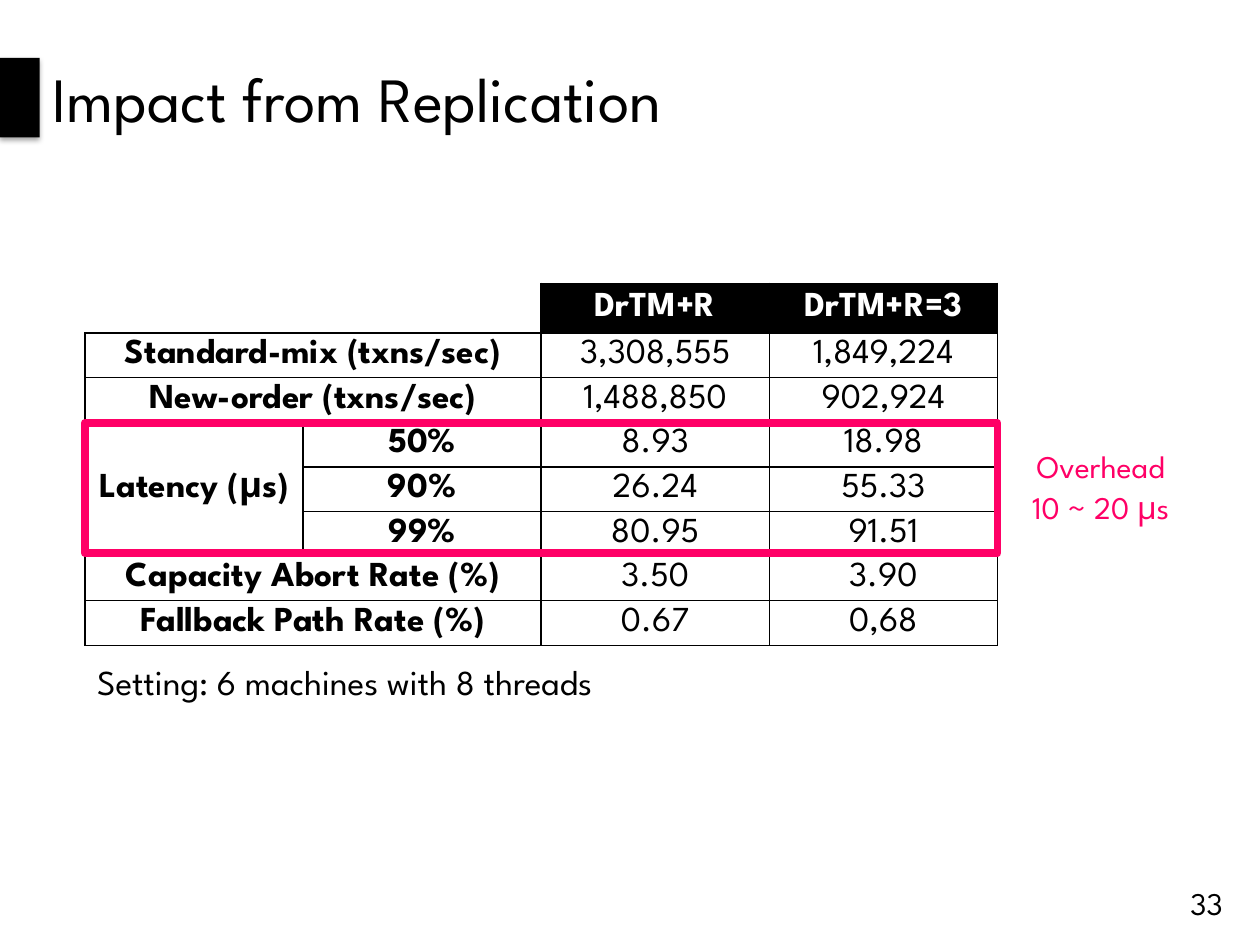
from dataclasses import dataclass

from lxml.etree import SubElement
from pptx import Presentation
from pptx.dml.color import RGBColor as Rgb
from pptx.enum.shapes import MSO_SHAPE as Shape
from pptx.enum.text import MSO_ANCHOR as Anchor, MSO_AUTO_SIZE as Fit, PP_ALIGN as Align
from pptx.oxml import parse_xml
from pptx.oxml.ns import nsdecls, qn
from pptx.util import Cm, Pt


@dataclass(frozen=True)
class Theme:
    font: str = "League Spartan"
    ink: str = "000000"
    paper: str = "FFFFFF"
    accent: str = "FF0066"
    title_size: int = 36
    body_size: int = 20
    note_size: int = 18
    grid_width: float = 1
    frame_width: float = 4.5


def apply_format(target, values):
    for name, value in values.items():
        setattr(target, name, value)


class SlideBuilder:
    def __init__(self, slide, theme):
        self.slide = slide
        self.theme = theme

    def set_text(self, frame, text, size, color=None, bold=False, align=Align.LEFT, spacing=1.0):
        """Fill a text frame, one paragraph per line of text."""
        for index, line in enumerate(text.split("\n")):
            para = frame.add_paragraph() if index else frame.paragraphs[0]
            apply_format(para, {"alignment": align, "line_spacing": spacing})
            span = para.add_run()
            span.text = line
            apply_format(span.font, {"name": self.theme.font, "size": Pt(size), "bold": bold})
            span.font.color.rgb = Rgb.from_string(color or self.theme.ink)

    def title(self, text, left, top, width, height):
        box = self.slide.shapes.title
        apply_format(box, {"left": Cm(left), "top": Cm(top),
                           "width": Cm(width), "height": Cm(height)})
        apply_format(box.text_frame, {"vertical_anchor": Anchor.MIDDLE, "auto_size": Fit.NONE})
        self.set_text(box.text_frame, text, self.theme.title_size)

    def text(self, text, left, top, width, height, size, anchor=Anchor.MIDDLE, **style):
        box = self.slide.shapes.add_textbox(Cm(left), Cm(top), Cm(width), Cm(height))
        apply_format(box.text_frame, {"word_wrap": True, "vertical_anchor": anchor})
        self.set_text(box.text_frame, text, size, **style)

    def rectangle(self, left, top, width, height):
        box = self.slide.shapes.add_shape(
            Shape.RECTANGLE, Cm(left), Cm(top), Cm(width), Cm(height))
        box.shadow.inherit = False
        return box

    def bar(self, *place):
        """Draw a solid block with a soft shadow below it."""
        box = self.rectangle(*place)
        box.fill.solid()
        box.fill.fore_color.rgb = Rgb.from_string(self.theme.ink)
        box.line.fill.background()
        effects = box.element.spPr.find(qn("a:effectLst"))
        effects.append(parse_xml(
            f'<a:outerShdw {nsdecls("a")} blurRad="{Pt(3.1)}" dist="{Pt(1.8)}" dir="5400000" '
            f'rotWithShape="0"><a:srgbClr val="{self.theme.ink}"><a:alpha val="35000"/>'
            '</a:srgbClr></a:outerShdw>'))

    def frame(self, *place):
        box = self.rectangle(*place)
        box.fill.background()
        box.line.color.rgb = Rgb.from_string(self.theme.accent)
        box.line.width = Pt(self.theme.frame_width)

    def borders(self, cell, sides):
        """Rule the named sides of a cell and clear the others."""
        properties = cell._tc.get_or_add_tcPr()
        for index, side in enumerate("LRTB"):
            line = parse_xml(f'<a:ln{side} {nsdecls("a")} w="{Pt(self.theme.grid_width)}"/>')
            if side in sides:
                fill = SubElement(line, qn("a:solidFill"))
                SubElement(fill, qn("a:srgbClr"), val=self.theme.ink)
            else:
                SubElement(line, qn("a:noFill"))
            properties.insert(index, line)

    def cell(self, cell, text, bold, header, corner):
        apply_format(cell, {"margin_left": Cm(0.2), "margin_right": Cm(0.2), "margin_top": 0,
                            "margin_bottom": 0, "vertical_anchor": Anchor.MIDDLE})
        if corner:
            cell.fill.background()
            cell.text_frame.paragraphs[0].font.size = Pt(self.theme.body_size)
        else:
            cell.fill.solid()
            back = self.theme.ink if header else self.theme.paper
            cell.fill.fore_color.rgb = Rgb.from_string(back)
        if text:
            self.set_text(cell.text_frame, text, self.theme.body_size, bold=bold,
                          color=self.theme.paper if header else None, align=Align.CENTER)
        self.borders(cell, "RB" if corner else "LRTB")

    def table(self, rows, left, top, widths, heights, merges, label_columns):
        """Build a grid whose header has an open corner above the label columns."""
        table = self.slide.shapes.add_table(
            len(rows), len(widths), Cm(left), Cm(top),
            Cm(sum(widths)), Cm(sum(heights))).table
        apply_format(table, {"first_row": False, "horz_banding": False})
        for column, width in zip(table.columns, widths):
            column.width = Cm(width)
        for row, height in zip(table.rows, heights):
            row.height = Cm(height)
        for first, last in merges:
            table.cell(*first).merge(table.cell(*last))
        for y, row in enumerate(rows):
            for x, text in enumerate(row):
                header, label = y == 0, x < label_columns
                self.cell(table.cell(y, x), text, header or label, header, header and label)


ROWS = [
    ("", "", "DrTM+R", "DrTM+R=3"),
    ("Standard-mix (txns/sec)", "", "3,308,555", "1,849,224"),
    ("New-order (txns/sec)", "", "1,488,850", "902,924"),
    ("Latency (μs)", "50%", "8.93", "18.98"),
    ("", "90%", "26.24", "55.33"),
    ("", "99%", "80.95", "91.51"),
    ("Capacity Abort Rate (%)", "", "3.50", "3.90"),
    ("Fallback Path Rate (%)", "", "0.67", "0,68"),
]
WIDE_ROWS = (0, 1, 2, 6, 7)
LATENCY_ROWS = (3, 5)


def main():
    theme = Theme()
    deck = Presentation()
    apply_format(deck, {"slide_width": Cm(25.4), "slide_height": Cm(19.05)})
    page = SlideBuilder(deck.slides.add_slide(deck.slide_layouts[5]), theme)

    page.bar(0, 1.17, 0.8, 1.6)
    page.text("33", 23.5, 17.7, 1.4, 1.02, theme.note_size, align=Align.RIGHT)
    page.title("Impact from Replication", 0.8, 0, 24.6, 3.94)

    left, top = 1.71, 5.71
    widths = [4.4, 4.8, 4.6, 4.6]
    heights = [1.0] + [0.9] * (len(ROWS) - 1)
    merges = [((row, 0), (row, 1)) for row in WIDE_ROWS]
    merges.append(tuple((row, 0) for row in LATENCY_ROWS))
    page.table(ROWS, left, top, widths, heights, merges, label_columns=2)

    page.text("Setting: 6 machines with 8 threads", left, 13.2, 12.6, 1.11,
              theme.body_size, anchor=Anchor.TOP)
    page.text("Overhead\n10 ~ 20 μs", 20.3, 9.6, 3.78, 0.33, theme.note_size,
              color=theme.accent, align=Align.CENTER, spacing=1.1)
    page.frame(left, 8.53, sum(widths), 2.62)

    deck.save("out.pptx")


if __name__ == "__main__":
    main()
